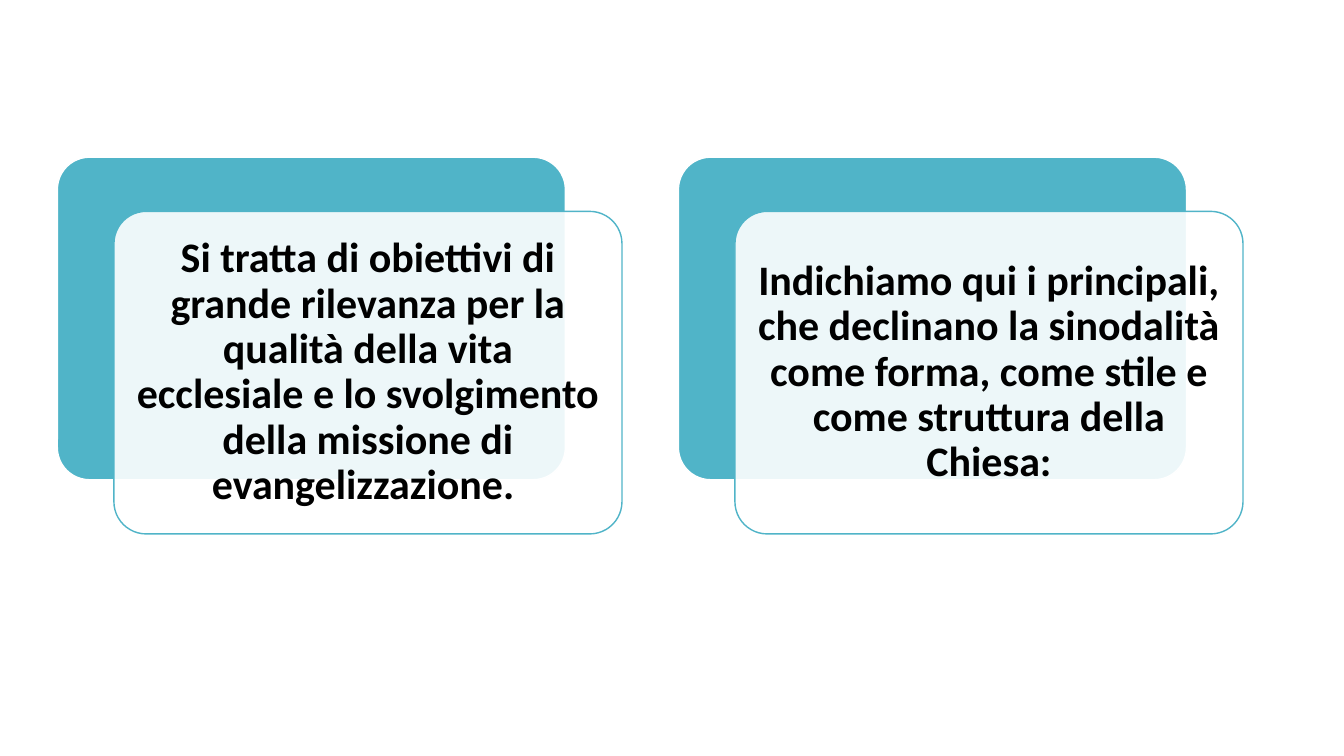
from dataclasses import dataclass

from lxml import etree
from pptx import Presentation
from pptx.dml.color import RGBColor
from pptx.enum import shapes, text
from pptx.oxml import ns
from pptx.shapes.autoshape import Shape
from pptx.slide import Slide
from pptx.util import Pt

TEAL, WHITE, BLACK = "50B4C8", "FFFFFF", "000000"
CARD_W, CARD_H = 362.9, 230.4
TOP = 112.3
SHIFT_X, SHIFT_Y = 40.4, 38.7
PAD = 6.8


@dataclass
class Card:
    left: float
    message: str


CARDS = [
    Card(41, "Si tratta di obiettivi di grande rilevanza per la qualità della vita "
             "ecclesiale e lo svolgimento della missione di evangelizzazione. "),
    Card(484.6, "Indichiamo qui i principali, che declinano la sinodalità come forma, "
                "come stile e come struttura della Chiesa:"),
]


def color(value: str) -> RGBColor:
    return RGBColor.from_string(value)


def add_panel(s: Slide, left: float, top: float, fill: str, line: str) -> Shape:
    sp = s.shapes.add_shape(shapes.MSO_SHAPE.ROUNDED_RECTANGLE,
                            Pt(left), Pt(top), Pt(CARD_W), Pt(CARD_H))
    sp.adjustments[0] = 0.1
    sp.shadow.inherit = False
    sp.fill.solid()
    sp.fill.fore_color.rgb = color(fill)
    sp.line.color.rgb = color(line)
    sp.line.width = Pt(1)
    return sp


def set_opacity(sp: Shape, percent: int) -> None:
    clr = sp.element.spPr.find(ns.qn("a:solidFill")).find(ns.qn("a:srgbClr"))
    etree.SubElement(clr, ns.qn("a:alpha"), val=str(percent * 1000))


def add_message(s: Slide, left: float, top: float, message: str) -> None:
    sp = s.shapes.add_textbox(Pt(left), Pt(top),
                              Pt(CARD_W - 2 * PAD), Pt(CARD_H - 2 * PAD))
    tf = sp.text_frame
    frame_format = {"word_wrap": True, "vertical_anchor": text.MSO_ANCHOR.MIDDLE}
    for side in ("left", "top", "right", "bottom"):
        frame_format[f"margin_{side}"] = Pt(8.64)
    for name, value in frame_format.items():
        setattr(tf, name, value)
    p = tf.paragraphs[0]
    p.alignment = text.PP_ALIGN.CENTER
    p.line_spacing = 0.9
    r = p.add_run()
    r.text = message
    for name, value in {"name": "Calibri", "size": Pt(30), "bold": True}.items():
        setattr(r.font, name, value)
    r.font.color.rgb = color(BLACK)


def add_card(s: Slide, card: Card) -> None:
    left, top = card.left + SHIFT_X, TOP + SHIFT_Y
    add_panel(s, card.left, TOP, TEAL, WHITE)
    set_opacity(add_panel(s, left, top, WHITE, TEAL), 90)
    add_message(s, left + PAD, top + PAD, card.message)


def main() -> None:
    prs = Presentation()
    prs.slide_width, prs.slide_height = Pt(960), Pt(540)
    s = prs.slides.add_slide(prs.slide_layouts[6])
    for card in CARDS:
        add_card(s, card)
    prs.save("out.pptx")


if __name__ == "__main__":
    main()
